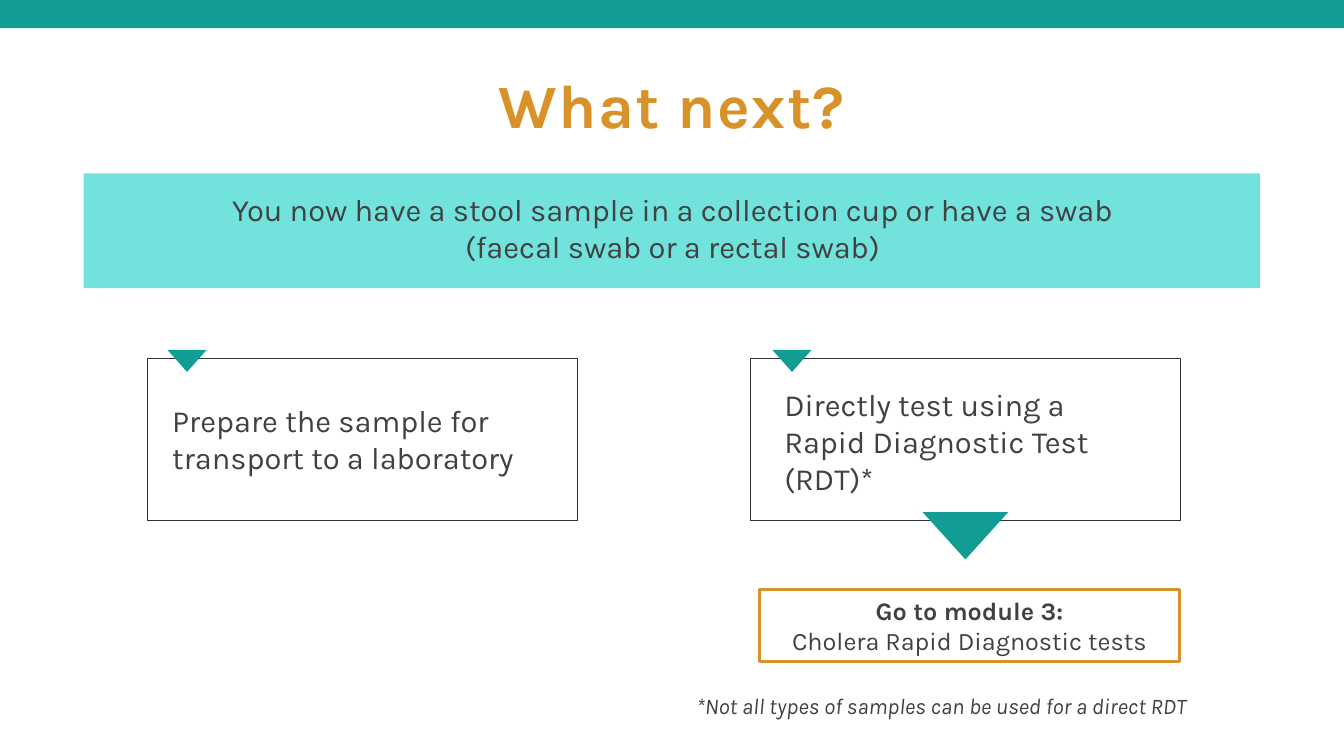
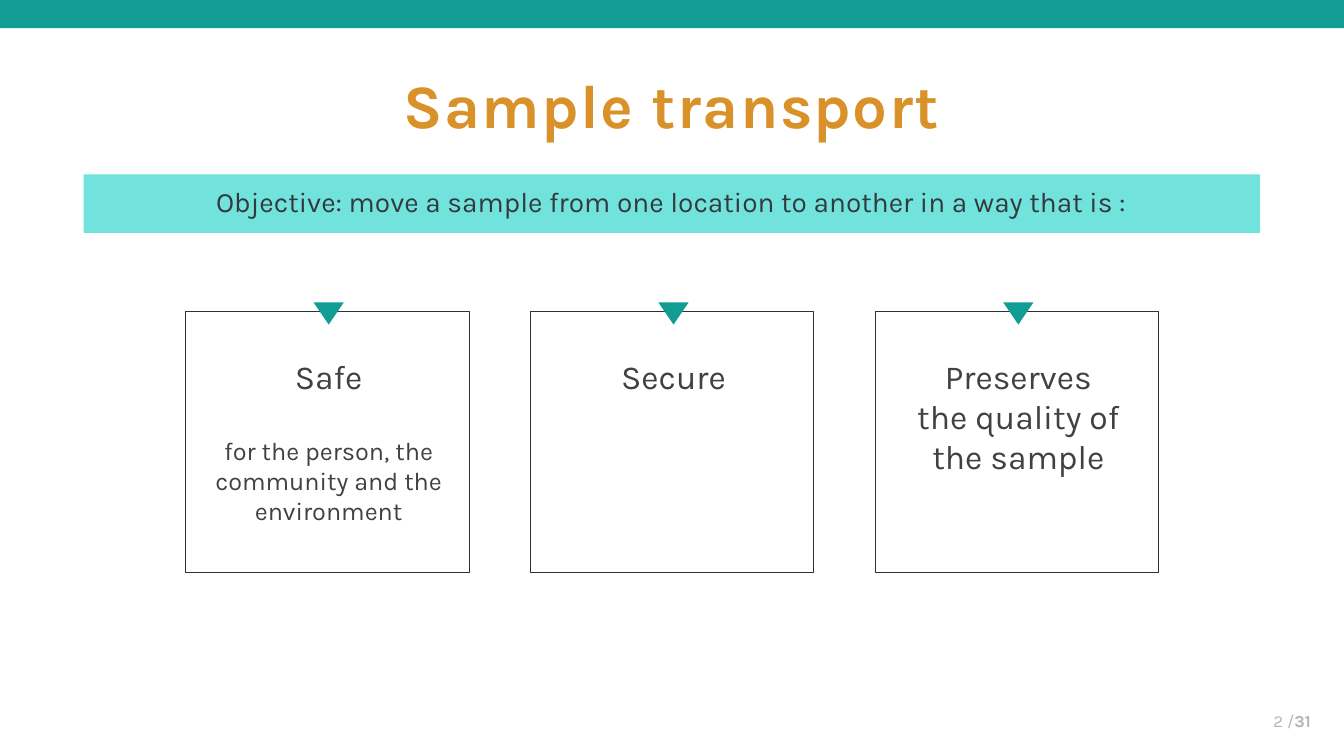
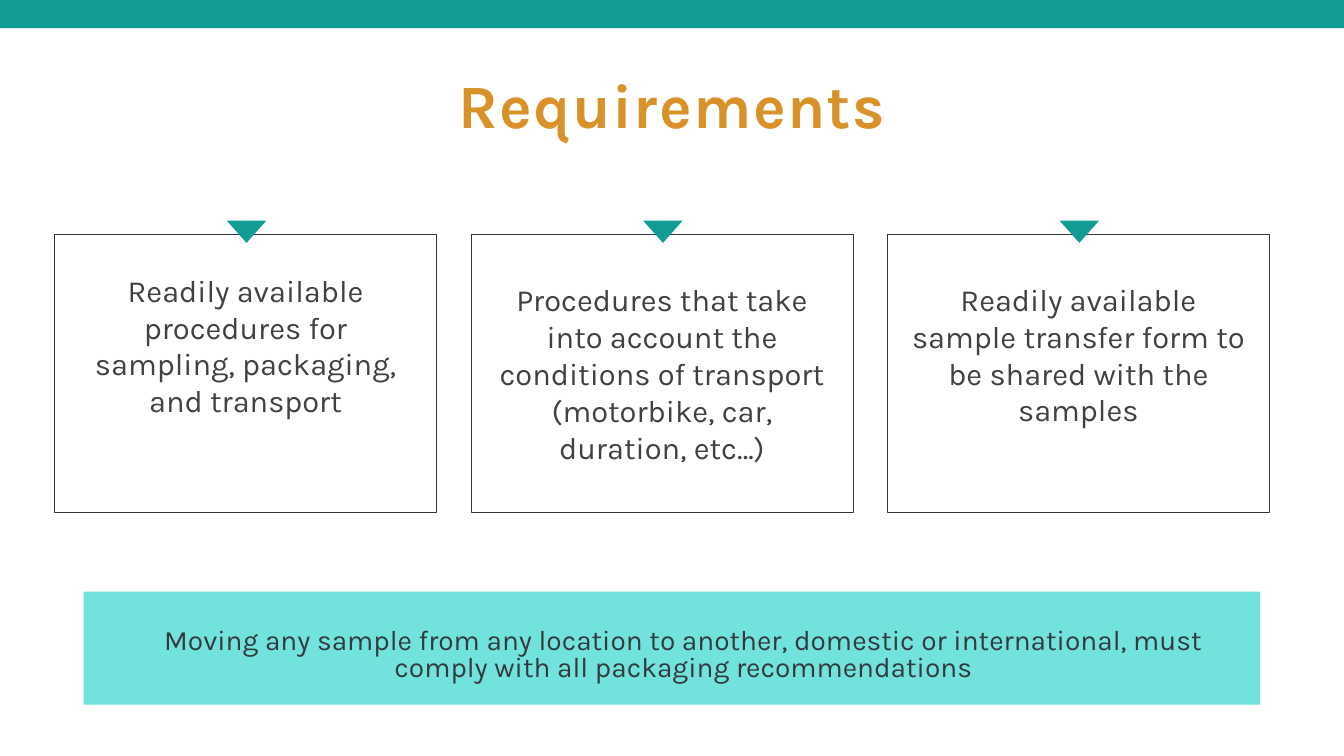
from pptx import Presentation
from pptx.dml.color import RGBColor
from pptx.enum.shapes import MSO_SHAPE
from pptx.enum.text import MSO_ANCHOR, PP_ALIGN
from pptx.util import Inches, Pt

RECT, TRIANGLE = MSO_SHAPE.RECTANGLE, MSO_SHAPE.ISOSCELES_TRIANGLE
LEFT, CENTER, RIGHT = PP_ALIGN.LEFT, PP_ALIGN.CENTER, PP_ALIGN.RIGHT
TOP, MIDDLE = MSO_ANCHOR.TOP, MSO_ANCHOR.MIDDLE

TEAL = RGBColor(0x11, 0x9C, 0x94)
AQUA = RGBColor(0x71, 0xE2, 0xDC)
GOLD = RGBColor(0xD9, 0x92, 0x29)
WHITE = RGBColor(0xFF, 0xFF, 0xFF)
TEXT = RGBColor(0x41, 0x41, 0x42)
DARK = RGBColor(0x33, 0x3A, 0x3E)
OUTLINE = RGBColor(0x31, 0x31, 0x32)
GREY = RGBColor(0xB3, 0xB3, 0xB4)
FONT = "Karla"


def add_shape(s, kind, x, y, w, h, fill=None, line=None, weight=0.25):
    sp = s.shapes.add_shape(kind, Inches(x), Inches(y), Inches(w), Inches(h))
    sp.shadow.inherit = False
    if fill is None:
        sp.fill.background()
    else:
        sp.fill.solid()
        sp.fill.fore_color.rgb = fill
    if line is None:
        sp.line.fill.background()
    else:
        sp.line.color.rgb = line
        sp.line.width = Pt(weight)
    if kind == TRIANGLE:
        sp.rotation = 180
    return sp


def add_text(s, x, y, w, h, text, size, color=TEXT, align=CENTER, anchor=TOP,
             spacing=None, shape=None):
    sp = shape or s.shapes.add_textbox(Inches(x), Inches(y), Inches(w), Inches(h))
    tf = sp.text_frame
    tf.word_wrap = True
    tf.vertical_anchor = anchor
    tf.text = text
    for p in tf.paragraphs:
        p.alignment = align
        p.line_spacing = spacing
        for r in p.runs:
            r.font.name = FONT
            r.font.size = Pt(size)
            r.font.color.rgb = color
    return tf


prs = Presentation()
prs.slide_width, prs.slide_height = Inches(13.33), Inches(7.5)

slides = []
for title in ("What next?", "Sample transport", "Requirements"):
    s = prs.slides.add_slide(prs.slide_layouts[6])
    add_shape(s, RECT, 0, 0, 13.33, 0.28, TEAL)
    tf = add_text(s, 1.35, 0.28, 10.63, 1.64, title, 44, GOLD, anchor=MIDDLE, spacing=0.8)
    r = tf.paragraphs[0].runs[0]
    r.font.bold = True
    r.font._element.set("spc", "100")
    slides.append(s)
next_slide, transport_slide, requirements_slide = slides

s = next_slide
add_shape(s, RECT, 0.83, 1.72, 11.67, 1.14, AQUA)
add_text(s, 1.08, 1.84, 11.18, 0.84,
         "You now have a stool sample in a collection cup or have a swab\n"
         "(faecal swab or a rectal swab)", 22)
options = [
    (1.46, 1.66, 1.61, 3.94, "Prepare the sample for transport to a laboratory"),
    (7.44, 7.66, 7.68, 3.78, "Directly test using a Rapid Diagnostic Test (RDT)*"),
]
for box_x, marker_x, text_x, text_y, text in options:
    add_shape(s, RECT, box_x, 3.55, 4.27, 1.61, WHITE, OUTLINE)
    add_text(s, text_x, text_y, 3.75, 0.84, text, 22, align=LEFT)
    add_shape(s, TRIANGLE, marker_x, 3.47, 0.39, 0.22, TEAL)
add_shape(s, TRIANGLE, 9.15, 5.08, 0.85, 0.47, TEAL)
sp = add_shape(s, RECT, 7.53, 5.85, 4.17, 0.71, line=GOLD, weight=2.25)
tf = add_text(s, 0, 0, 0, 0, "Go to module 3:\vCholera Rapid Diagnostic tests", 18,
              anchor=MIDDLE, shape=sp)
tf.paragraphs[0].runs[0].font.bold = True
tf = add_text(s, 6.81, 6.82, 5.69, 0.37,
              "*Not all types of samples can be used for a direct RDT", 16, align=LEFT)
tf.paragraphs[0].runs[0].font.italic = True

s = transport_slide
add_shape(s, RECT, 0.83, 1.73, 11.67, 0.58, AQUA)
tf = add_text(s, 0.99, 1.82, 11.34, 0.49,
              "Objective: move a sample from one location to another in a way that is :",
              20, DARK, spacing=0.9)
tf.margin_left = tf.margin_right = Inches(0.05)
qualities = [
    "Safe\nfor the person, the community and the environment",
    "Secure",
    "Preserves\vthe quality of the sample",
]
for i, text in enumerate(qualities):
    x = 1.84 + i * 3.42
    add_shape(s, RECT, x, 3.09, 2.81, 2.59, WHITE, OUTLINE)
    tf = add_text(s, x + 0.15, 3.48, 2.54, 1.82, text, 24)
    for p in tf.paragraphs[1:]:
        p.space_before = Pt(28)
        p.runs[0].font.size = Pt(18)
    add_shape(s, TRIANGLE, x + 1.27, 3, 0.3, 0.22, TEAL)
tf = add_text(s, 10.1, 6.95, 3, 0.4, "2 /", 12, GREY, RIGHT, MIDDLE)
r = tf.paragraphs[0].add_run()
r.text = "31"
r.font.name = FONT
r.font.size = Pt(12)
r.font.bold = True
r.font.color.rgb = GREY

s = requirements_slide
requirements = [
    ("Readily available procedures for sampling, packaging, and transport", 0.6),
    ("Procedures that take into account the conditions of transport "
     "(motorbike, car, duration, etc…)", 0.05),
    ("Readily available sample transfer form to be shared with the samples", 0.42),
]
for i, (text, bottom) in enumerate(requirements):
    x = 0.54 + i * 4.13
    sp = add_shape(s, RECT, x, 2.32, 3.79, 2.76, line=DARK)
    tf = add_text(s, 0, 0, 0, 0, text, 22, anchor=MIDDLE, shape=sp)
    tf.margin_left = tf.margin_right = Inches(0.24)
    tf.margin_bottom = Inches(bottom)
    add_shape(s, TRIANGLE, x + 1.71, 2.19, 0.39, 0.22, TEAL)
add_shape(s, RECT, 0.83, 5.87, 11.67, 1.12, AQUA)
tf = add_text(s, 1.11, 6.19, 11.34, 0.7,
              "Moving any sample from any location to another, domestic or international, "
              "must comply with all packaging recommendations", 20, DARK, spacing=0.8)
tf.margin_left = tf.margin_right = Inches(0.05)

prs.save("out.pptx")
